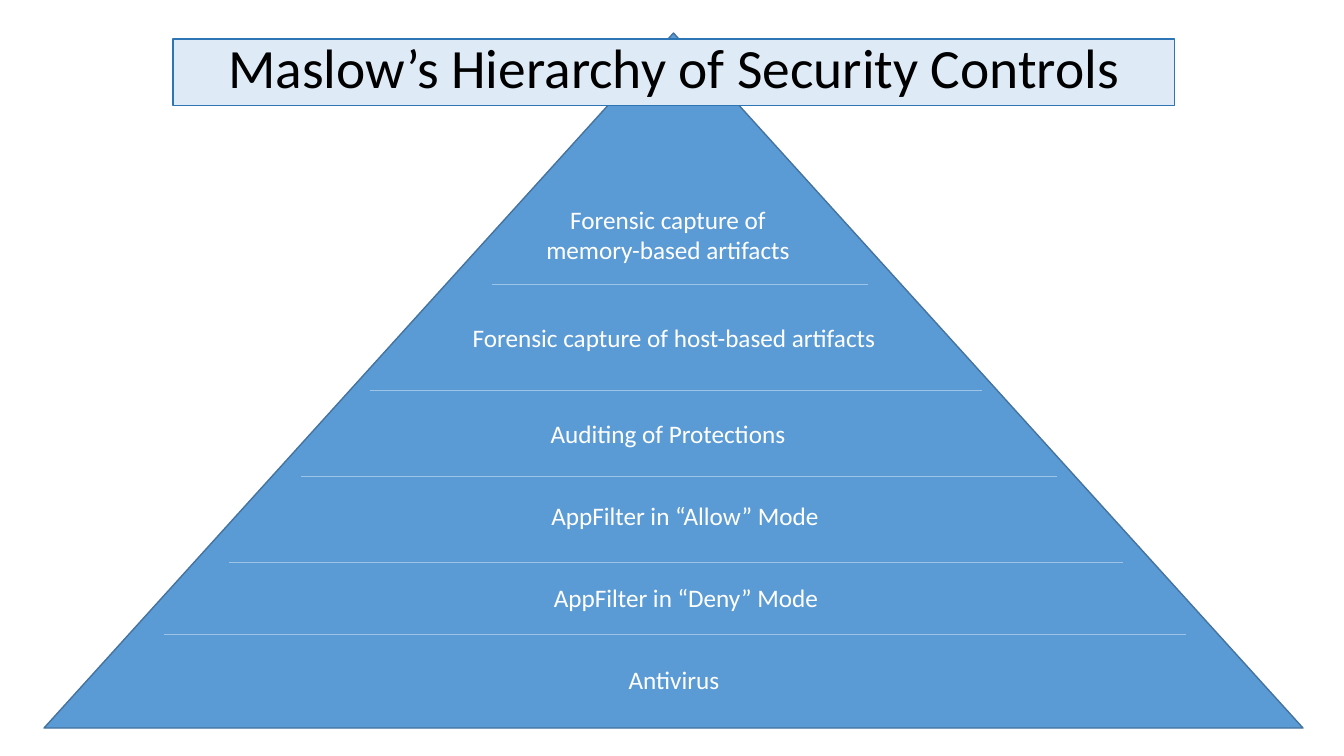
from pptx import Presentation
from pptx import util as u
from pptx.dml.color import RGBColor
from pptx.enum import shapes, text
from pptx.oxml import ns
from lxml import etree

PX = 914400 / 100.8


def px(*lengths):
    return [u.Emu(round(n * PX)) for n in lengths]


def paint(fmt, colour):
    if hasattr(fmt, "solid"):
        fmt.solid()
        fmt.fore_color.rgb = RGBColor.from_string(colour)
    else:
        fmt.color.rgb = RGBColor.from_string(colour)


prs = Presentation()
prs.slide_width, prs.slide_height = px(1344, 756)
s = prs.slides.add_slide(prs.slide_layouts[5])

# Pyramid
pyramid = s.shapes.add_shape(shapes.MSO_SHAPE.ISOSCELES_TRIANGLE, *px(44, 33, 1259, 695))
pyramid.shadow.inherit = False
paint(pyramid.fill, "5B9BD5")
paint(pyramid.line, "43739E")
pyramid.line.width = u.Pt(1)

# Levels from base to top: text, centre, top, width, height
levels = [
    ("Antivirus", 674, 659, 112, 40),
    ("AppFilter in “Deny” Mode", 686, 577, 306, 40),
    ("AppFilter in “Allow” Mode", 685, 495, 308, 40),
    ("Auditing of Protections", 668, 413, 266, 40),
    ("Forensic capture of host-based artifacts", 674, 317, 434, 40),
    ("Forensic capture of memory-based artifacts", 668, 199, 278, 72),
]
for label, centre, top, width, height in levels:
    box = s.shapes.add_textbox(*px(centre - width // 2, top, width, height))
    tf = box.text_frame
    tf.word_wrap = True
    tf.auto_size = text.MSO_AUTO_SIZE.SHAPE_TO_FIT_TEXT
    tf.text = label
    p = tf.paragraphs[0]
    p.alignment = text.PP_ALIGN.CENTER
    r = p.runs[0]
    r.font.name, r.font.size = "Calibri", u.Pt(18)
    paint(r.font, "FFFFFF")

# Dividers: left, right, height on the slide
dividers = [(492, 868, 284), (370, 982, 390), (301, 1057, 476), (229, 1123, 562), (164, 1186, 634)]
for left, right, y in dividers:
    line = s.shapes.add_connector(shapes.MSO_CONNECTOR.STRAIGHT, *px(left, y, right, y))
    paint(line.line, "9DC3E6")
    line.line.width = u.Pt(0.5)
    etree.SubElement(line._element.spPr, ns.qn("a:effectLst"))

# Title banner, in front of the pyramid's tip
title = s.shapes.title
s.shapes._spTree.append(title._element)
title.left, title.top, title.width, title.height = px(173, 39, 1002, 67)
paint(title.fill, "DEEBF7")
paint(title.line, "2E75B6")
title.line.width = u.Pt(0.75)
tf = title.text_frame
tf.text = "Maslow’s Hierarchy of Security Controls"
tf.word_wrap = True
tf.auto_size = text.MSO_AUTO_SIZE.NONE
tf.vertical_anchor = text.MSO_ANCHOR.MIDDLE
p = tf.paragraphs[0]
p.alignment = text.PP_ALIGN.CENTER
p.line_spacing = 0.8
r = p.runs[0]
r.font.name, r.font.size = "Calibri", u.Pt(39.6)
paint(r.font, "000000")

prs.save("out.pptx")
